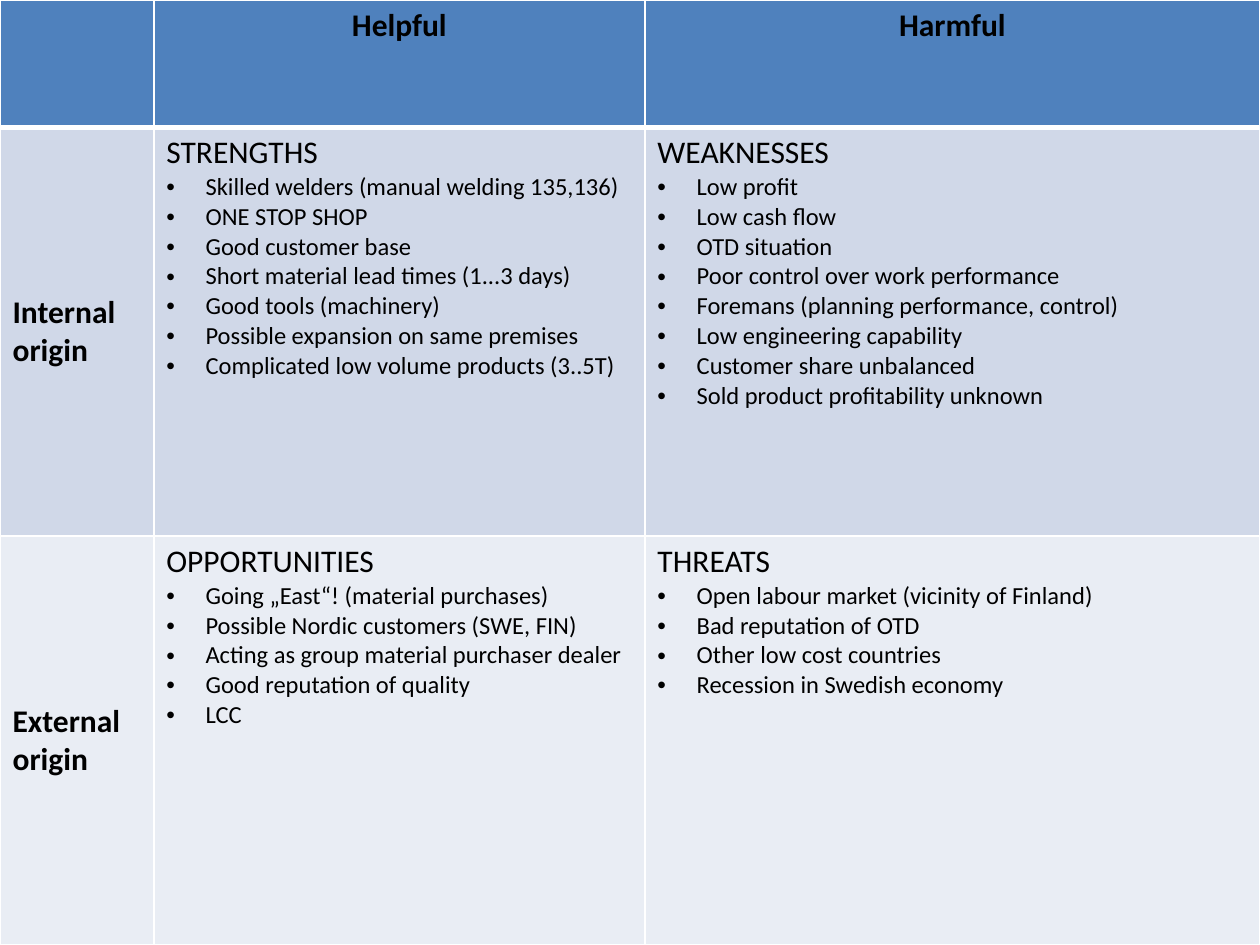
"""Builds a one-slide SWOT matrix."""
import lxml.etree
import pptx
import pptx.dml.color
import pptx.enum.text
import pptx.oxml.ns
import pptx.util

Cm = pptx.util.Cm
Pt = pptx.util.Pt
qn = pptx.oxml.ns.qn

COLORS = {
    "header": "4F81BD",
    "internal": "D0D8E8",
    "external": "E9EDF4",
    "border": "FFFFFF",
    "text": "000000",
}
COLUMN_WIDTHS = [3.1, 9.9, 12.4]
ROW_HEIGHTS = [2.57, 8.24, 8.24]
HEADINGS = ["Helpful", "Harmful"]
ORIGINS = [
    ("internal", "Internal origin", [
        ("STRENGTHS", [
            "Skilled welders (manual welding 135,136)",
            "ONE STOP SHOP",
            "Good customer base",
            "Short material lead times (1...3 days)",
            "Good tools (machinery)",
            "Possible expansion on same premises",
            "Complicated low volume products (3..5T)",
        ]),
        ("WEAKNESSES", [
            "Low profit",
            "Low cash flow",
            "OTD situation",
            "Poor control over work performance",
            "Foremans (planning performance, control)",
            "Low engineering capability",
            "Customer share unbalanced",
            "Sold product profitability unknown",
        ]),
    ]),
    ("external", "External origin", [
        ("OPPORTUNITIES", [
            "Going „East“! (material purchases)",
            "Possible Nordic customers (SWE, FIN)",
            "Acting as group material purchaser dealer",
            "Good reputation of quality",
            "LCC",
        ]),
        ("THREATS", [
            "Open labour market (vicinity of Finland)",
            "Bad reputation of OTD",
            "Other low cost countries",
            "Recession in Swedish economy",
        ]),
    ]),
]


class SwotSlide:
    def __init__(self, slide):
        self.slide = slide
        self.font_name = "Calibri"
        self.heading_size = Pt(18)
        self.item_size = Pt(14)
        self.indent = Cm(0.79)

    def add_grid(self, widths, heights):
        frame = self.slide.shapes.add_table(
            len(heights), len(widths), Cm(0), Cm(0), Cm(sum(widths)), Cm(sum(heights)))
        table = frame.table
        for column, width in zip(table.columns, widths):
            column.width = Cm(width)
        for row, height in zip(table.rows, heights):
            row.height = Cm(height)
        return table

    def style_cell(self, cell, color, top=1, bottom=1):
        cell.fill.solid()
        cell.fill.fore_color.rgb = pptx.dml.color.RGBColor.from_string(COLORS[color])
        properties = cell._tc.get_or_add_tcPr()
        borders = [("a:lnL", 1), ("a:lnR", 1), ("a:lnT", top), ("a:lnB", bottom)]
        for position, (tag, width) in enumerate(borders):
            line = lxml.etree.Element(qn(tag), w=str(Pt(width)))
            fill = lxml.etree.SubElement(line, qn("a:solidFill"))
            lxml.etree.SubElement(fill, qn("a:srgbClr"), val=COLORS["border"])
            properties.insert(position, line)

    def format_text(self, para, size, bold=False):
        for span in para.runs:
            span.font.name = self.font_name
            span.font.size = size
            span.font.bold = bold
            span.font.color.rgb = pptx.dml.color.RGBColor.from_string(COLORS["text"])

    def add_label(self, cell, text, bold=True, centered=False):
        cell.text_frame.text = text
        para = cell.text_frame.paragraphs[0]
        if centered:
            para.alignment = pptx.enum.text.PP_ALIGN.CENTER
        self.format_text(para, self.heading_size, bold)

    def add_bullet(self, cell, text):
        para = cell.text_frame.add_paragraph()
        properties = para._p.get_or_add_pPr()
        properties.set("marL", str(self.indent))
        properties.set("indent", str(-self.indent))
        lxml.etree.SubElement(properties, qn("a:buFont"), typeface="Arial")
        lxml.etree.SubElement(properties, qn("a:buChar"), char="•")
        para.text = text
        self.format_text(para, self.item_size)

    def add_quadrant(self, cell, heading, items):
        self.add_label(cell, heading, bold=False)
        for item in items:
            self.add_bullet(cell, item)


def main():
    deck = pptx.Presentation()
    deck.slide_width = Cm(25.4)
    deck.slide_height = Cm(19.05)
    page = SwotSlide(deck.slides.add_slide(deck.slide_layouts[6]))
    table = page.add_grid(COLUMN_WIDTHS, ROW_HEIGHTS)

    for cell in table.rows[0].cells:
        page.style_cell(cell, "header", bottom=3)
    for column, heading in enumerate(HEADINGS, start=1):
        page.add_label(table.cell(0, column), heading, centered=True)

    for row, (color, origin, quadrants) in enumerate(ORIGINS, start=1):
        for cell in table.rows[row].cells:
            page.style_cell(cell, color, top=3 if row == 1 else 1)
        label = table.cell(row, 0)
        label.vertical_anchor = pptx.enum.text.MSO_ANCHOR.MIDDLE
        page.add_label(label, origin)
        for column, (heading, items) in enumerate(quadrants, start=1):
            page.add_quadrant(table.cell(row, column), heading, items)

    deck.save("out.pptx")


if __name__ == "__main__":
    main()
